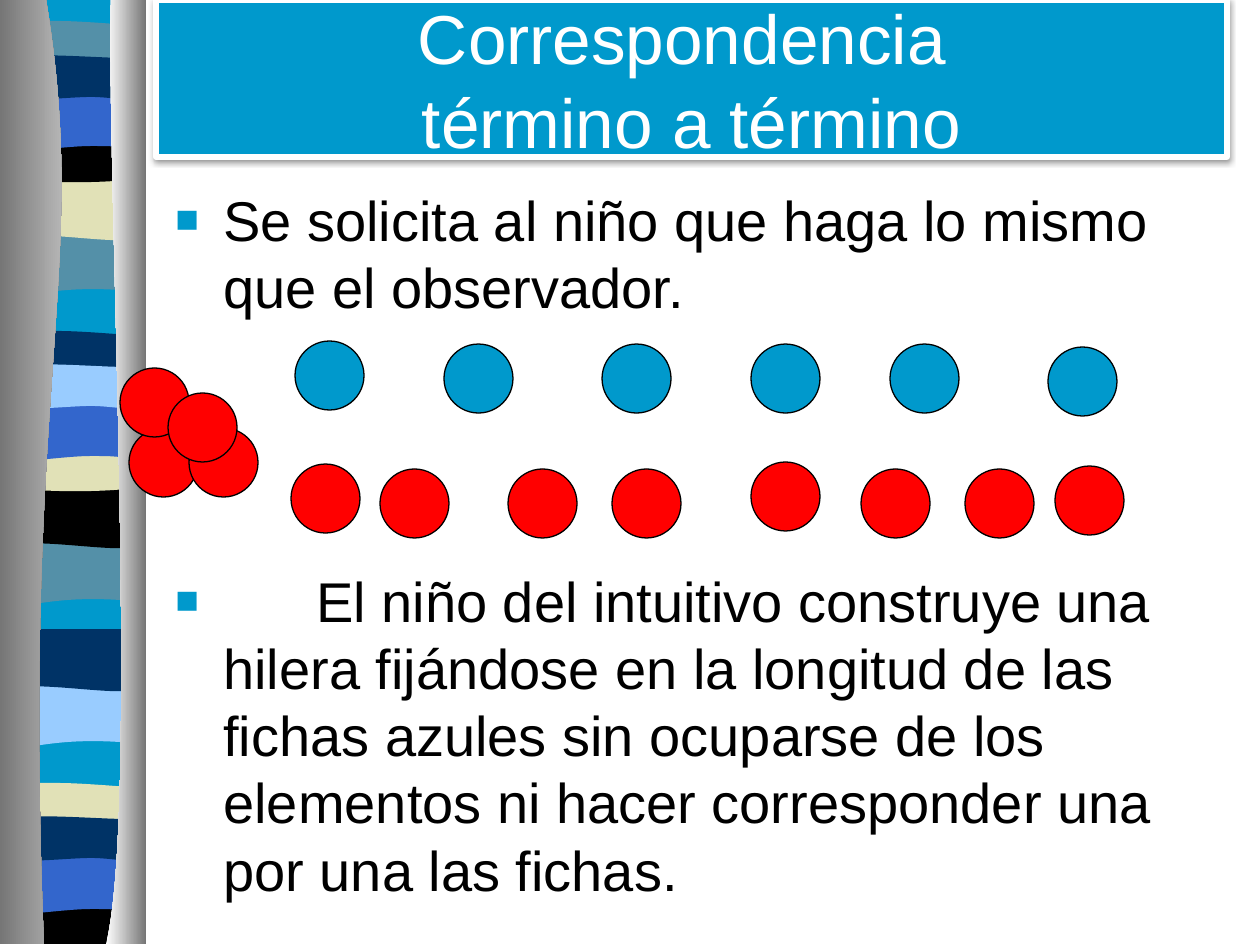
from pptx import Presentation
from pptx.dml.color import RGBColor
from pptx.enum.shapes import MSO_SHAPE
from pptx.enum.text import MSO_ANCHOR, PP_ALIGN
from pptx.oxml import parse_xml
from pptx.oxml.ns import nsdecls, qn
from pptx.util import Pt

OVAL = MSO_SHAPE.OVAL
MIDDLE = MSO_ANCHOR.MIDDLE
CENTER = PP_ALIGN.CENTER

SCALE = 914400 / 126
TITLE_ONLY = 5
FONT = "Arial"
DISC = 69

SKY = RGBColor(0x00, 0x99, 0xCC)
TEAL = RGBColor(0x54, 0x90, 0xA8)
NAVY = RGBColor(0x00, 0x33, 0x66)
BLUE = RGBColor(0x33, 0x66, 0xCC)
PALE = RGBColor(0x99, 0xCC, 0xFF)
SAND = RGBColor(0xE1, 0xE1, 0xB7)
RED = RGBColor(0xFF, 0x00, 0x00)
BLACK = RGBColor(0x00, 0x00, 0x00)
WHITE = RGBColor(0xFF, 0xFF, 0xFF)
GRAY = RGBColor(0x76, 0x76, 0x76)
SILVER = RGBColor(0xD3, 0xD3, 0xD3)

# Outlines: each step is one point (a line) or three points (a curve)
PANEL = [[(143, 0)], [(143, 942)], [(6, 942)], [(6, 0)]]
SWELL = [[(143, 0)], [(143, 0), (143, 59), (143, 59)],
         [(49, 49), (30, 69), (6, 59)], [(6, 0)]]
SLOPE = [[(143, 0)], [(143, 59)], [(121, 69), (49, 52), (7, 59)], [(7, 0)]]
STRIP = [[(143, 0)], [(143, 30)], [(121, 36), (30, 36), (6, 30)], [(6, 0)],
         [(15, -6), (37, -5), (59, -5)], [(82, -5), (126, -1), (143, 0)]]
BOWL = [[(143, 0)], [(143, 41)], [(121, 48), (30, 48), (7, 41)], [(7, 0)],
        [(91, 6), (115, 0), (143, 0)]]
FOOT = [[(143, 0)], [(143, 47)], [(7, 47)], [(6, 0)],
        [(91, 6), (115, 0), (143, 0)]]
ARCH = [[(143, 0)], [(143, 0), (143, 59), (143, 59)],
        [(122, 53), (113, 53), (91, 53)], [(68, 53), (28, 59), (6, 59)],
        [(6, 0)]]
RIPPLE = [[(143, 0)], [(143, 39)], [(135, 45), (113, 39), (91, 39)],
          [(68, 39), (21, 45), (6, 39)], [(6, 0)],
          [(26, -6), (100, 0), (122, 0)], [(145, 0), (139, 0), (143, 0)]]

# Outline, top and colour, from back to front
BANDS = [
    (PANEL, 0, SKY),
    (SWELL, 233, TEAL), (SLOPE, 178, SAND), (STRIP, 26, TEAL),
    (BOWL, 136, BLACK), (ARCH, 93, BLUE), (RIPPLE, 58, NAVY),
    (SWELL, 543, TEAL), (SLOPE, 486, BLACK), (STRIP, 336, NAVY),
    (BOWL, 445, SAND), (ARCH, 403, BLUE), (RIPPLE, 367, PALE),
    (SWELL, 685, PALE), (SLOPE, 629, NAVY), (STRIP, 788, SAND),
    (FOOT, 897, BLACK), (ARCH, 856, BLUE), (RIPPLE, 819, NAVY),
]
ROLLS = [
    ([[(46, -1)], [(91, 272), (21, 373), (44, 944)], [(0, 944)], [(0, -1)]],
     GRAY, SILVER),
    ([[(111, -1)], [(106, 158), (140, 814), (106, 944)], [(146, 944)],
      [(146, 0)]], WHITE, GRAY),
]

BLUE_DISCS = [(295, 341), (444, 344), (602, 344), (751, 344), (890, 344),
              (1048, 347)]
RED_DISCS = [(129, 428), (120, 368), (189, 428), (380, 469), (861, 469),
             (751, 462), (168, 393), (965, 469), (1055, 466), (291, 464),
             (508, 469), (612, 469)]

HEADING = "Correspondencia \vtérmino a término"
POINTS = [
    ("Se solicita al niño que haga lo mismo que el observador.", 0),
    ("\tEl niño del intuitivo construye una hilera fijándose en la longitud "
     "de las fichas azules sin ocuparse de los elementos ni hacer "
     "corresponder una por una las fichas.", 141),
]


def px(n):
    return round(n * SCALE)


def style(thing, values):
    for name, value in values.items():
        setattr(thing, name, value)


def add_free(slide, steps, top=0):
    dots = [(px(x), px(y + top)) for step in steps for x, y in step]
    pen = slide.shapes.build_freeform(*dots[0], scale=1.0)
    pen.add_line_segments(dots[1:], close=True)
    shape = pen.convert_to_shape()
    # Join the three lines of each curved step into one curve
    lines = iter(list(shape._element.iter(qn("a:lnTo"))))
    for step in steps[1:]:
        group = [next(lines) for _ in step]
        if len(group) == 3:
            bend = parse_xml(f'<a:cubicBezTo {nsdecls("a")}/>')
            group[0].addprevious(bend)
            for line in group:
                bend.append(line[0])
                line.getparent().remove(line)
    shape.shadow.inherit = False
    shape.line.fill.background()
    return shape


def add_band(slide, steps, top, color):
    band = add_free(slide, steps, top)
    band.fill.solid()
    band.fill.fore_color.rgb = color


def add_roll(slide, steps, *colors):
    roll = add_free(slide, steps)
    roll.fill.gradient()
    roll.fill.gradient_angle = 0
    for stop, color in zip(roll.fill.gradient_stops, colors):
        stop.color.rgb = color


def add_disc(slide, left, top, color):
    disc = slide.shapes.add_shape(OVAL, px(left), px(top), px(DISC), px(DISC))
    disc.shadow.inherit = False
    disc.fill.solid()
    disc.fill.fore_color.rgb = color
    disc.line.color.rgb = BLACK
    disc.line.width = Pt(0.75)


def set_title(slide):
    title = slide.shapes.title
    style(title, {"left": px(156), "top": 0, "width": px(1071),
                  "height": px(157)})
    title.fill.solid()
    title.fill.fore_color.rgb = SKY
    title.line.color.rgb = WHITE
    title.line.width = Pt(3)
    title._element.spPr.append(parse_xml(
        f'<a:effectLst {nsdecls("a")}><a:outerShdw blurRad="40000" '
        'dist="20000" dir="5400000"><a:srgbClr val="000000">'
        '<a:alpha val="40000"/></a:srgbClr></a:outerShdw></a:effectLst>'))
    frame = title.text_frame
    frame.text = HEADING
    style(frame, {"vertical_anchor": MIDDLE, "margin_top": 0,
                  "margin_bottom": 0, "word_wrap": True})
    para = frame.paragraphs[0]
    style(para, {"alignment": CENTER, "line_spacing": Pt(48)})
    for run in para.runs:
        style(run.font, {"name": FONT, "size": Pt(39.6)})
        run.font.color.rgb = WHITE


def add_bullet(para):
    props = para._p.get_or_add_pPr()
    props.set("marL", str(px(48)))
    props.set("indent", str(-px(48)))
    for item in (f'<a:buClr {nsdecls("a")}><a:srgbClr val="{SKY}"/></a:buClr>',
                 f'<a:buSzPct {nsdecls("a")} val="70000"/>',
                 f'<a:buFont {nsdecls("a")} typeface="{FONT}"/>',
                 f'<a:buChar {nsdecls("a")} char="■"/>',
                 f'<a:tabLst {nsdecls("a")}><a:tab pos="{px(141)}" algn="l"/>'
                 '</a:tabLst>'):
        props.append(parse_xml(item))


def add_body(slide):
    box = slide.shapes.add_textbox(px(163), px(179), px(1071), px(567))
    frame = box.text_frame
    frame.word_wrap = True
    for i, (text, gap) in enumerate(POINTS):
        para = frame.add_paragraph() if i else frame.paragraphs[0]
        style(para, {"line_spacing": Pt(38.4), "space_before": Pt(gap)})
        add_bullet(para)
        run = para.add_run()
        run.text = text
        style(run.font, {"name": FONT, "size": Pt(32)})
        run.font.color.rgb = BLACK


def main():
    deck = Presentation()
    style(deck, {"slide_width": px(1260), "slide_height": px(945)})
    slide = deck.slides.add_slide(deck.slide_layouts[TITLE_ONLY])

    # Side ornament
    for band in BANDS:
        add_band(slide, *band)
    for roll in ROLLS:
        add_roll(slide, *roll)

    # Text
    set_title(slide)
    add_body(slide)

    # Rows of counters
    for color, spots in ((SKY, BLUE_DISCS), (RED, RED_DISCS)):
        for left, top in spots:
            add_disc(slide, left, top, color)

    deck.save("out.pptx")


if __name__ == "__main__":
    main()
